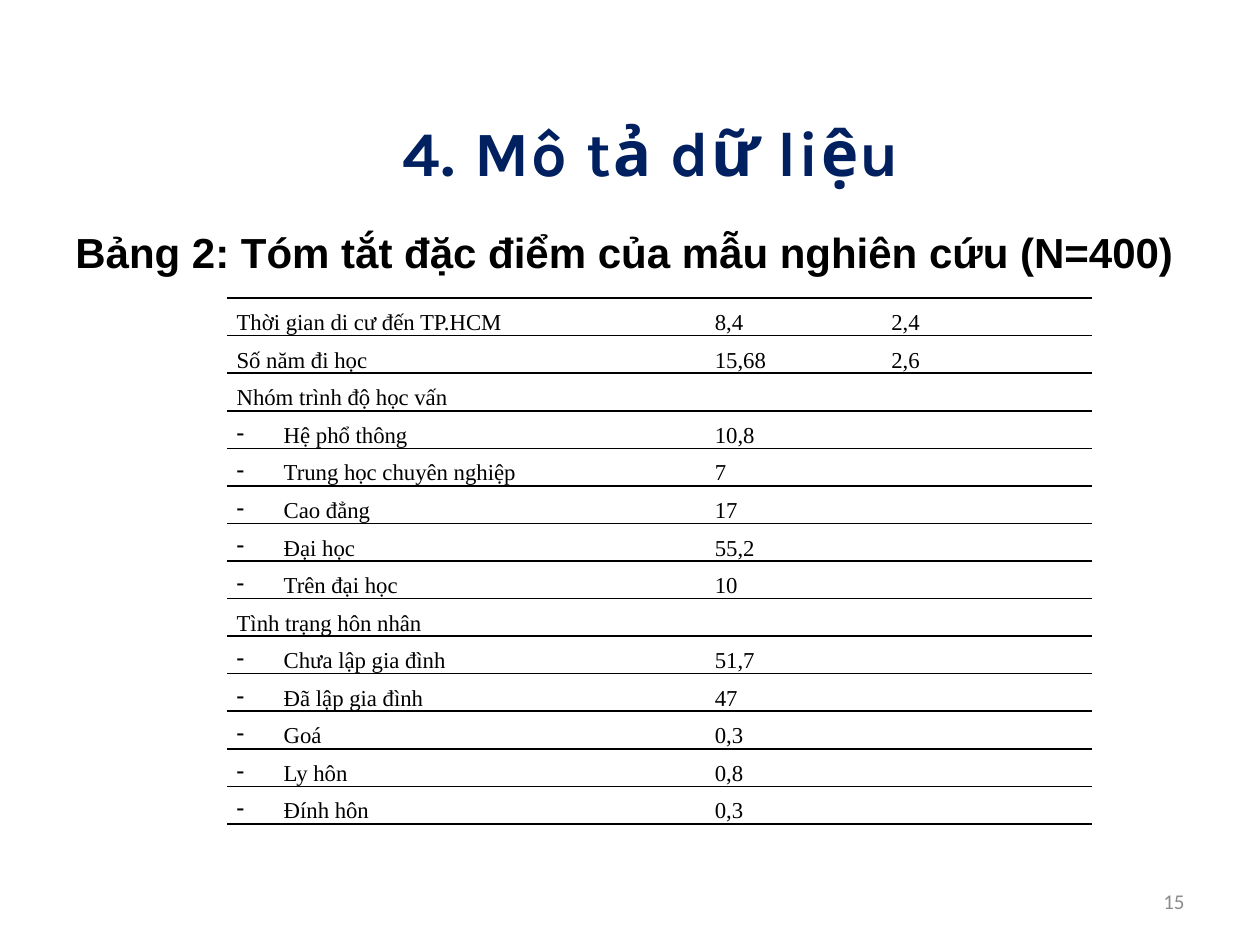
from dataclasses import dataclass

from lxml import etree
from pptx import Presentation
from pptx import util as u
from pptx.dml.color import RGBColor
from pptx.enum import text as t
from pptx.oxml import ns

COLOURS = {"title": "002060", "ink": "000000", "muted": "8C8C8C", "paper": "FFFFFF"}
ROW_HEIGHT = u.Cm(0.75)
COLUMN_WIDTHS = [u.Cm(9.64), u.Cm(3.56), u.Cm(4.23)]
CELL_MARGINS = {"margin_left": u.Cm(0.19), "margin_right": u.Cm(0.19),
                "margin_top": 0, "margin_bottom": 0}
BULLET_INDENT = u.Cm(0.95)


@dataclass
class Caption:
    wording: str
    left: float
    top: float
    width: float
    height: float
    font: dict
    colour: str
    alignment: t.PP_ALIGN
    anchor: t.MSO_ANCHOR
    fit: t.MSO_AUTO_SIZE = t.MSO_AUTO_SIZE.NONE
    tracking: int = 0


@dataclass
class Trait:
    label: str
    mean: str = ""
    deviation: str = ""
    bulleted: bool = False


CAPTIONS = [
    Caption("4. Mô tả dữ liệu", 1.7, 2.11, 22.86, 1.9,
            {"name": "Karla", "size": u.Pt(36), "bold": True}, "title",
            t.PP_ALIGN.CENTER, t.MSO_ANCHOR.MIDDLE,
            t.MSO_AUTO_SIZE.TEXT_TO_FIT_SHAPE, 100),
    Caption("Bảng 2: Tóm tắt đặc điểm của mẫu nghiên cứu (N=400)",
            1.27, 4.45, 22.86, 12.57,
            {"name": "Arial", "size": u.Pt(24), "bold": True}, "ink",
            t.PP_ALIGN.LEFT, t.MSO_ANCHOR.TOP),
    Caption("15", 18.2, 17.65, 5.93, 1.02,
            {"name": "Calibri", "size": u.Pt(12)}, "muted",
            t.PP_ALIGN.RIGHT, t.MSO_ANCHOR.MIDDLE),
]

TRAITS = [
    Trait("Thời gian di cư đến TP.HCM", "8,4", "2,4"),
    Trait("Số năm đi học", "15,68", "2,6"),
    Trait("Nhóm trình độ học vấn"),
    Trait("Hệ phổ thông", "10,8", bulleted=True),
    Trait("Trung học chuyên nghiệp", "7", bulleted=True),
    Trait("Cao đẳng", "17", bulleted=True),
    Trait("Đại học", "55,2", bulleted=True),
    Trait("Trên đại học", "10", bulleted=True),
    Trait("Tình trạng hôn nhân"),
    Trait("Chưa lập gia đình", "51,7", bulleted=True),
    Trait("Đã lập gia đình", "47", bulleted=True),
    Trait("Goá", "0,3", bulleted=True),
    Trait("Ly hôn", "0,8", bulleted=True),
    Trait("Đính hôn", "0,3", bulleted=True),
]


def apply(target, values: dict) -> None:
    for attribute, value in values.items():
        setattr(target, attribute, value)


def style_font(font, values: dict, colour: str) -> None:
    apply(font, values)
    font.color.rgb = RGBColor.from_string(COLOURS[colour])


def draw_caption(slide, caption: Caption) -> None:
    box = slide.shapes.add_textbox(u.Cm(caption.left), u.Cm(caption.top),
                                   u.Cm(caption.width), u.Cm(caption.height))
    apply(box.text_frame, {"word_wrap": True, "vertical_anchor": caption.anchor,
                           "auto_size": caption.fit})
    line = box.text_frame.paragraphs[0]
    line.alignment = caption.alignment
    run = line.add_run()
    run.text = caption.wording
    style_font(run.font, caption.font, caption.colour)
    if caption.tracking:
        run.font._element.set("spc", str(caption.tracking))


def rule_cell(cell) -> None:
    """Rule the cell above and below, and leave its sides open."""
    properties = cell._tc.get_or_add_tcPr()
    for position, side in enumerate(["lnL", "lnR", "lnT", "lnB"]):
        border = etree.Element(ns.qn(f"a:{side}"), w=str(u.Pt(1)))
        if side in ("lnT", "lnB"):
            fill = etree.SubElement(border, ns.qn("a:solidFill"))
            etree.SubElement(fill, ns.qn("a:srgbClr"), val=COLOURS["ink"])
        else:
            etree.SubElement(border, ns.qn("a:noFill"))
        properties.insert(position, border)


def add_dash(paragraph) -> None:
    properties = paragraph._p.get_or_add_pPr()
    properties.set("marL", str(BULLET_INDENT))
    properties.set("indent", str(-BULLET_INDENT))
    etree.SubElement(properties, ns.qn("a:buChar"), char="-")


def fill_cell(cell, wording: str, bulleted: bool) -> None:
    apply(cell, CELL_MARGINS)
    cell.fill.solid()
    cell.fill.fore_color.rgb = RGBColor.from_string(COLOURS["paper"])
    rule_cell(cell)
    cell.text = wording
    paragraph = cell.text_frame.paragraphs[0]
    if bulleted:
        add_dash(paragraph)
    apply(paragraph, {"alignment": t.PP_ALIGN.JUSTIFY, "line_spacing": 1.5})
    face = {"name": "Times New Roman", "size": u.Pt(13), "bold": False}
    for part in [paragraph, *paragraph.runs]:
        style_font(part.font, face, "ink")


def draw_traits(slide, traits: list[Trait]) -> None:
    table = slide.shapes.add_table(
        len(traits), len(COLUMN_WIDTHS), u.Cm(4.58), u.Cm(6.01),
        sum(COLUMN_WIDTHS), ROW_HEIGHT * len(traits)).table
    apply(table, {"first_row": False, "horz_banding": False})
    for column, width in zip(table.columns, COLUMN_WIDTHS):
        column.width = width
    for row, trait in zip(table.rows, traits):
        row.height = ROW_HEIGHT
        wordings = [trait.label, trait.mean, trait.deviation]
        for index, (cell, wording) in enumerate(zip(row.cells, wordings)):
            fill_cell(cell, wording, trait.bulleted and index == 0)


def main() -> None:
    deck = Presentation()
    apply(deck, {"slide_width": u.Cm(25.4), "slide_height": u.Cm(19.05)})
    slide = deck.slides.add_slide(deck.slide_layouts[6])
    for caption in CAPTIONS:
        draw_caption(slide, caption)
    draw_traits(slide, TRAITS)
    deck.save("out.pptx")


if __name__ == "__main__":
    main()
